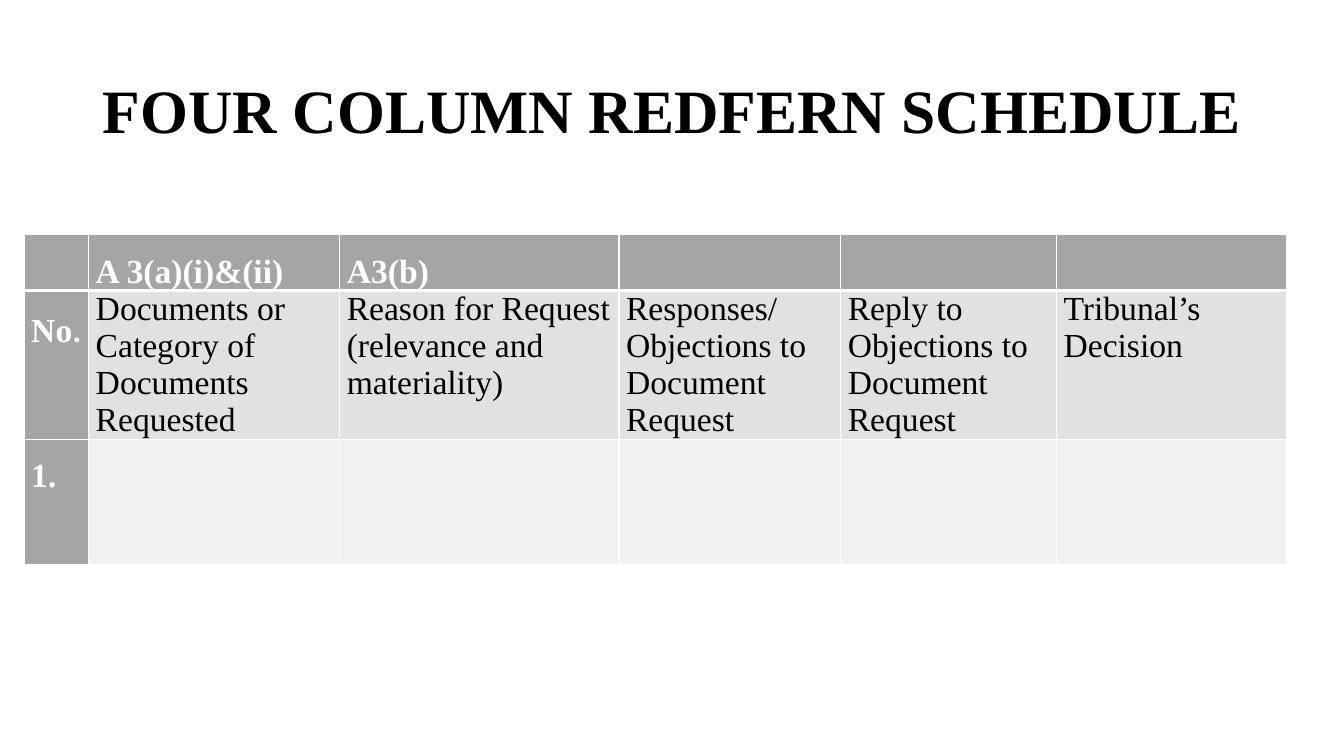
import dataclasses

import lxml.etree
import pptx
import pptx.dml.color
import pptx.enum.text
import pptx.oxml.ns
import pptx.util

PX = 9144  # 100 px to the inch


@dataclasses.dataclass(frozen=True)
class Theme:
    font: str = "Times New Roman"
    stop_font: str = "Calibri"
    title_size: int = 44
    table_size: int = 24
    ink: str = "000000"
    paper: str = "FFFFFF"
    head: str = "A5A5A5"
    bands: tuple = ("E1E1E1", "F0F0F0")


THEME = Theme()
COLUMNS = (64, 249, 277, 220, 214, 228)
ROWS = (42, 124, 124)
# Each cell is a tuple of paragraphs; each paragraph is a tuple of runs.
SCHEDULE = (
    ((), (("A 3(a)(i)&(ii)",),), (("A3(b)",),), (), (), ()),
    (
        (("No", "."),),
        (("Documents or Category of Documents Requested",),),
        (("Reason for Request",), ("(relevance and materiality)",)),
        (("Responses/",), ("Objections to Document Request",)),
        (("Reply to Objections to Document Request",),),
        (("Tribunal’s Decision",),),
    ),
    ((("1.",),), (), (), (), (), ()),
)


def px(n):
    return pptx.util.Emu(n * PX)


def rgb(value):
    return pptx.dml.color.RGBColor.from_string(value)


def add_run(p, text, size, color, bold, font=THEME.font):
    r = p.add_run()
    r.text = text
    r.font.name = font
    r.font.size = pptx.util.Pt(size)
    r.font.bold = bold
    r.font.color.rgb = rgb(color)


def add_title(s, text, left, top, width, height):
    sp = s.shapes.title
    sp.left, sp.top, sp.width, sp.height = map(px, (left, top, width, height))
    tf = sp.text_frame
    tf.word_wrap = True
    tf.vertical_anchor = pptx.enum.text.MSO_ANCHOR.MIDDLE
    p = tf.paragraphs[0]
    p.alignment = pptx.enum.text.PP_ALIGN.CENTER
    p.line_spacing = 0.9
    add_run(p, text, THEME.title_size, THEME.ink, True)


def set_borders(cell, top, bottom):
    """Draw the four cell edges; top and bottom are widths in points."""
    tc_pr = cell._tc.get_or_add_tcPr()
    qn = pptx.oxml.ns.qn
    edges = (("a:lnL", 1), ("a:lnR", 1), ("a:lnT", top), ("a:lnB", bottom))
    for i, (tag, width) in enumerate(edges):
        ln = lxml.etree.Element(qn(tag), w=str(pptx.util.Pt(width)))
        fill = lxml.etree.SubElement(ln, qn("a:solidFill"))
        lxml.etree.SubElement(fill, qn("a:srgbClr"), val=THEME.paper)
        tc_pr.insert(i, ln)


def fill_cell(cell, paragraphs, is_head):
    tf = cell.text_frame
    for i, runs in enumerate(paragraphs):
        p = tf.add_paragraph() if i else tf.paragraphs[0]
        if is_head:
            p.alignment = pptx.enum.text.PP_ALIGN.JUSTIFY
            p.line_spacing = 1.5
            p.space_before = p.space_after = pptx.util.Pt(6)
        for text in runs:
            font = THEME.stop_font if text == "." else THEME.font
            color = THEME.paper if is_head else THEME.ink
            add_run(p, text, THEME.table_size, color, is_head, font)
    if paragraphs:
        cell.margin_left = cell.margin_right = px(7)
        cell.margin_top = cell.margin_bottom = 0


def add_schedule(s, left, top):
    table = s.shapes.add_table(
        len(ROWS), len(COLUMNS), px(left), px(top), px(sum(COLUMNS)), px(sum(ROWS))
    ).table
    table.first_col = True
    for column, width in zip(table.columns, COLUMNS):
        column.width = px(width)
    for i, (row, height) in enumerate(zip(table.rows, ROWS)):
        row.height = px(height)
        for j, cell in enumerate(row.cells):
            is_head = i == 0 or j == 0
            cell.fill.solid()
            cell.fill.fore_color.rgb = rgb(THEME.head if is_head else THEME.bands[i - 1])
            set_borders(cell, top=3 if i == 1 else 1, bottom=3 if i == 0 else 1)
            fill_cell(cell, SCHEDULE[i][j], is_head)


def main():
    prs = pptx.Presentation()
    prs.slide_width, prs.slide_height = px(1333), px(750)
    s = prs.slides.add_slide(prs.slide_layouts.get_by_name("Title Only"))
    add_title(s, "FOUR COLUMN REDFERN SCHEDULE", 92, 40, 1150, 145)
    add_schedule(s, 24, 233)
    prs.save("out.pptx")


if __name__ == "__main__":
    main()
